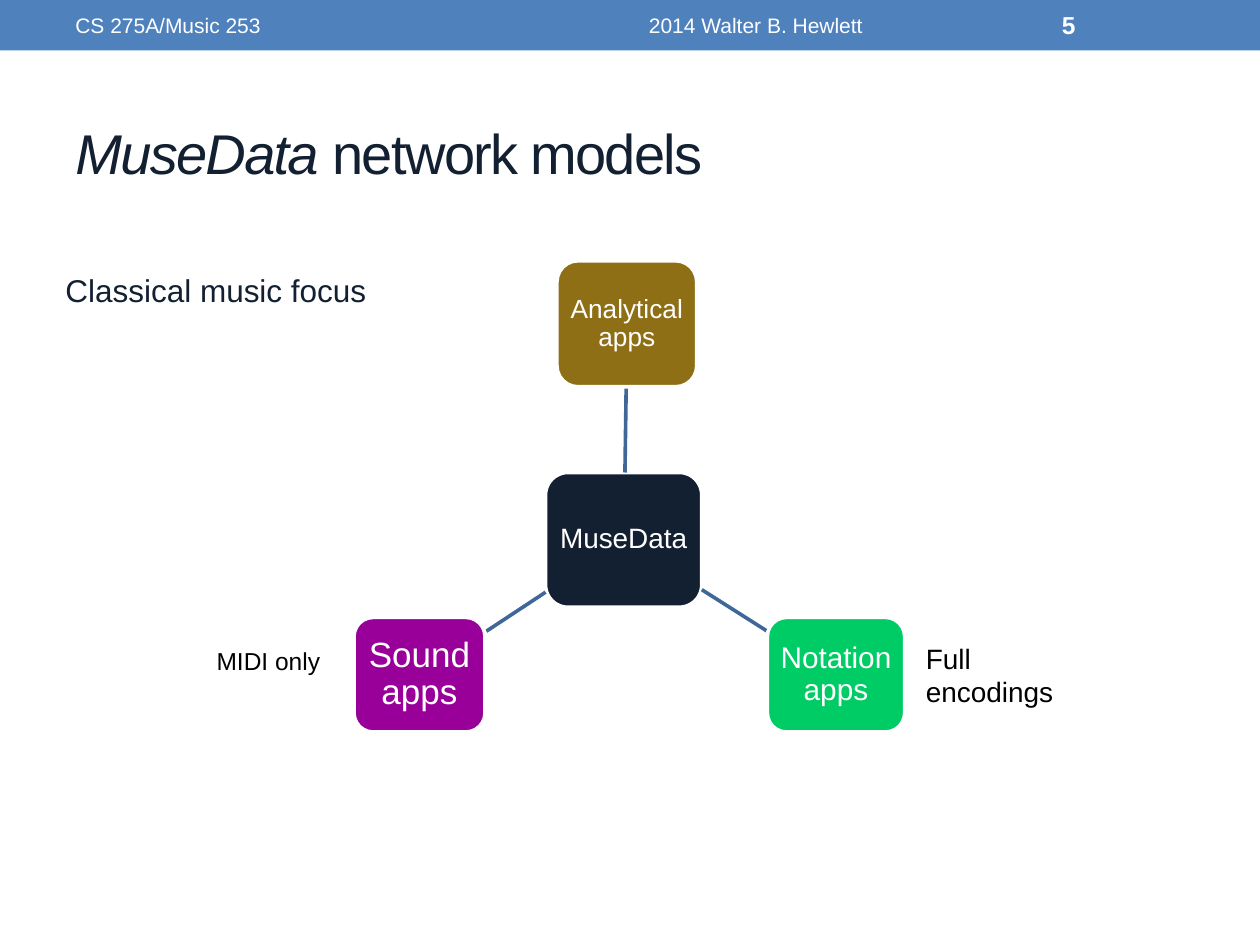
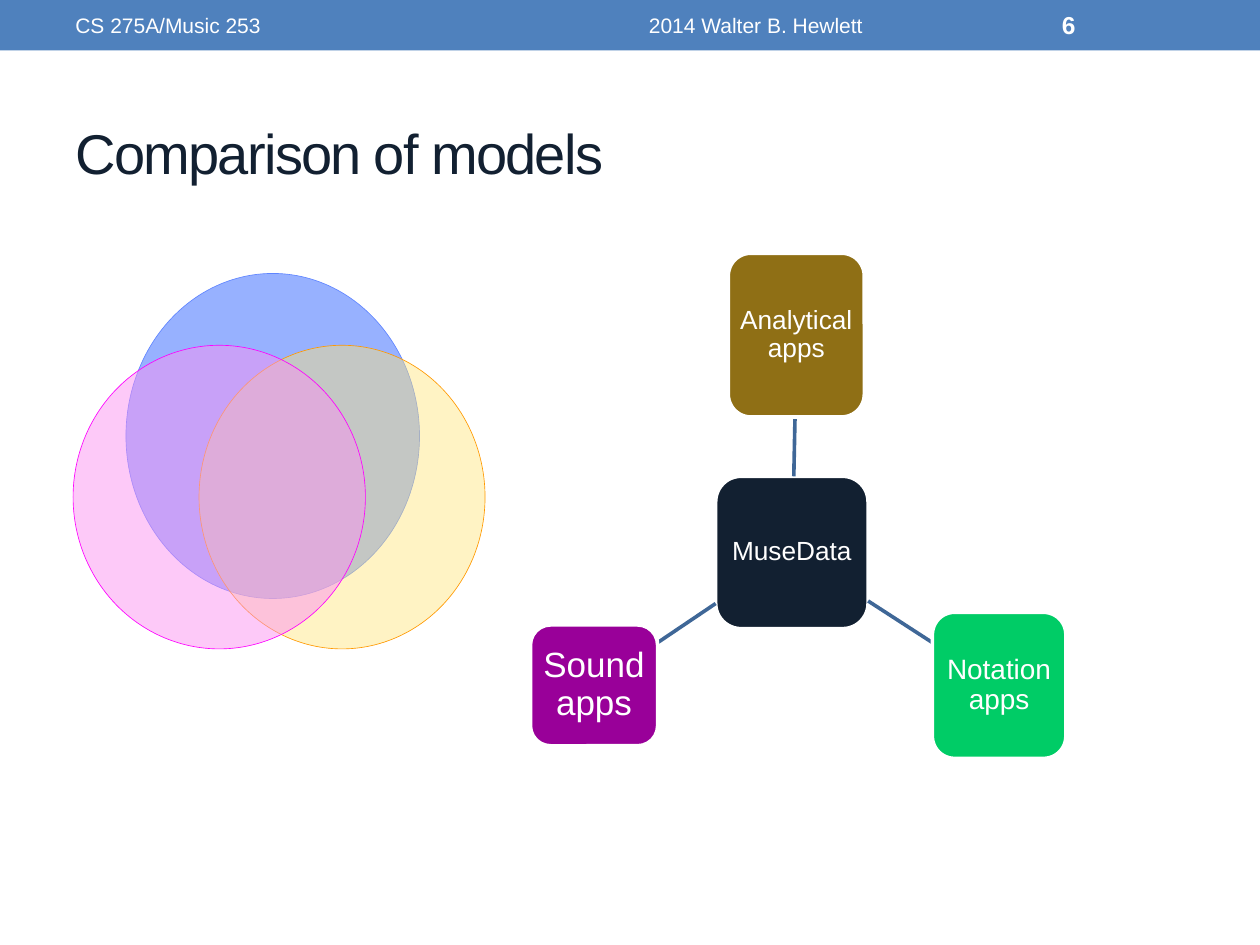
from dataclasses import dataclass

from lxml.etree import SubElement
from pptx import Presentation
from pptx.dml.color import RGBColor
from pptx.enum.shapes import MSO_CONNECTOR, MSO_SHAPE
from pptx.enum.text import MSO_ANCHOR, PP_ALIGN
from pptx.oxml.ns import qn
from pptx.util import Inches, Pt


@dataclass(frozen=True)
class Theme:
    font: str = "Arial"
    band: str = "4F81BD"
    ink: str = "122031"
    white: str = "FFFFFF"
    black: str = "000000"
    link: str = "3F6797"
    analytical: str = "8F6F15"
    notation: str = "00CC66"
    sound: str = "990099"
    title_size: int = 32
    header_size: int = 12
    number_size: int = 14
    node_border: float = 2.08
    circle_border: float = 0.37


theme = Theme()


def write_text(shape, runs, size, color, align=PP_ALIGN.LEFT, anchor=MSO_ANCHOR.MIDDLE,
               margins=(0.1, 0.05), line_spacing=1.0, spacing=0, bold=False):
    side, edge = (Inches(margin) for margin in margins)
    frame = shape.text_frame
    frame_format = {"word_wrap": True, "vertical_anchor": anchor, "margin_left": side,
                    "margin_right": side, "margin_top": edge, "margin_bottom": edge}
    for name, value in frame_format.items():
        setattr(frame, name, value)
    paragraph = frame.paragraphs[0]
    paragraph.alignment = align
    paragraph.line_spacing = line_spacing
    for text, italic in runs:
        run = paragraph.add_run()
        run.text = text
        font_format = {"name": theme.font, "size": Pt(size), "bold": bold, "italic": italic}
        for name, value in font_format.items():
            setattr(run.font, name, value)
        run.font.color.rgb = RGBColor.from_string(color)
        if spacing:
            run.font._element.set("spc", str(spacing * 100))


def draw_shape(slide, kind, box, fill, border=None, border_width=0, opacity=100):
    shape = slide.shapes.add_shape(kind, *map(Inches, box))
    shape.shadow.inherit = False
    shape.fill.solid()
    shape.fill.fore_color.rgb = RGBColor.from_string(fill)
    if opacity < 100:
        color = shape.fill._xPr.find(qn("a:solidFill"))[0]
        SubElement(color, qn("a:alpha")).set("val", str(opacity * 1000))
    if border:
        shape.line.color.rgb = RGBColor.from_string(border)
        shape.line.width = Pt(border_width)
    else:
        shape.line.fill.background()
    return shape


slides = [
    {
        "number": "5",
        "title": [("MuseData", True), (" network models", False)],
        "nodes": [
            ("MuseData", theme.ink, 16, (4.33, 3.75, 1.24, 1.07), None),
            ("Analytical apps", theme.analytical, 15, (4.42, 2.07, 1.11, 1), (4.96, 3.75, 4.97, 3.07)),
            ("Notation apps", theme.notation, 17, (6.09, 4.9, 1.09, 0.91), (5.57, 4.68, 6.09, 5.01)),
            ("Sound apps", theme.sound, 20, (2.81, 4.9, 1.04, 0.91), (4.33, 4.7, 3.86, 5.01)),
        ],
        "labels": [
            ("Classical music focus", 18, theme.ink, (0.42, 2.1, 3.12, 0.5)),
            ("MIDI only", 14, theme.black, (1.62, 5.08, 1.05, 0.34)),
            ("Full encodings", 16, theme.black, (7.25, 5.04, 1.53, 0.37)),
        ],
        "circles": [],
    },
    {
        "number": "6",
        "title": [("Comparison of models", False)],
        "nodes": [
            ("MuseData", theme.ink, 15, (5.68, 3.78, 1.21, 1.21), None),
            ("Analytical apps", theme.analytical, 15, (5.78, 2.01, 1.08, 1.3), (6.3, 3.78, 6.31, 3.3)),
            ("Notation apps", theme.notation, 16, (7.4, 4.86, 1.06, 1.16), (6.89, 4.77, 7.4, 5.1)),
            ("Sound apps", theme.sound, 20, (4.21, 4.96, 1.01, 0.96), (5.68, 4.79, 5.22, 5.1)),
        ],
        "labels": [],
        "circles": [
            ((1, 2.17, 2.33, 2.58), "3366FF", 51, "5F85FF"),
            ((1.58, 2.74, 2.27, 2.41), "FFE579", 44, "FF9900"),
            ((0.58, 2.74, 2.32, 2.41), "FB91F1", 49, "FF00FF"),
        ],
    },
]

presentation = Presentation()
presentation.slide_width = Inches(10)
presentation.slide_height = Inches(7.5)

for content in slides:
    slide = presentation.slides.add_slide(presentation.slide_layouts[6])
    draw_shape(slide, MSO_SHAPE.RECTANGLE, (0, 0, 10, 0.4), theme.band)

    title = slide.shapes.add_textbox(*map(Inches, (0.5, 0.67, 9, 1.08)))
    write_text(title, content["title"], theme.title_size, theme.ink, spacing=-1)

    header = [
        ("CS 275A/Music 253", 0.5, 3.17, theme.header_size, PP_ALIGN.LEFT, False),
        ("2014 Walter B. Hewlett", 3.75, 4.5, theme.header_size, PP_ALIGN.CENTER, False),
        (content["number"], 8.33, 1.17, theme.number_size, PP_ALIGN.LEFT, True),
    ]
    for text, left, width, size, align, bold in header:
        item = slide.shapes.add_textbox(*map(Inches, (left, 0.02, width, 0.36)))
        write_text(item, [(text, False)], size, theme.white, align, bold=bold)

    for text, fill, size, box, link in content["nodes"]:
        if link:
            connector = slide.shapes.add_connector(MSO_CONNECTOR.STRAIGHT, *map(Inches, link))
            connector.line.color.rgb = RGBColor.from_string(theme.link)
            connector.line.width = Pt(theme.node_border)
            SubElement(connector._element.spPr, qn("a:effectLst"))
        node = draw_shape(slide, MSO_SHAPE.ROUNDED_RECTANGLE, box, fill, theme.white, theme.node_border)
        write_text(node, [(text, False)], size, theme.white, PP_ALIGN.CENTER,
                   margins=(0.04, 0.04), line_spacing=0.9)

    for text, size, color, box in content["labels"]:
        label = slide.shapes.add_textbox(*map(Inches, box))
        write_text(label, [(text, False)], size, color, anchor=MSO_ANCHOR.TOP)

    for box, fill, opacity, border in content["circles"]:
        draw_shape(slide, MSO_SHAPE.OVAL, box, fill, border, theme.circle_border, opacity)

presentation.save("out.pptx")
